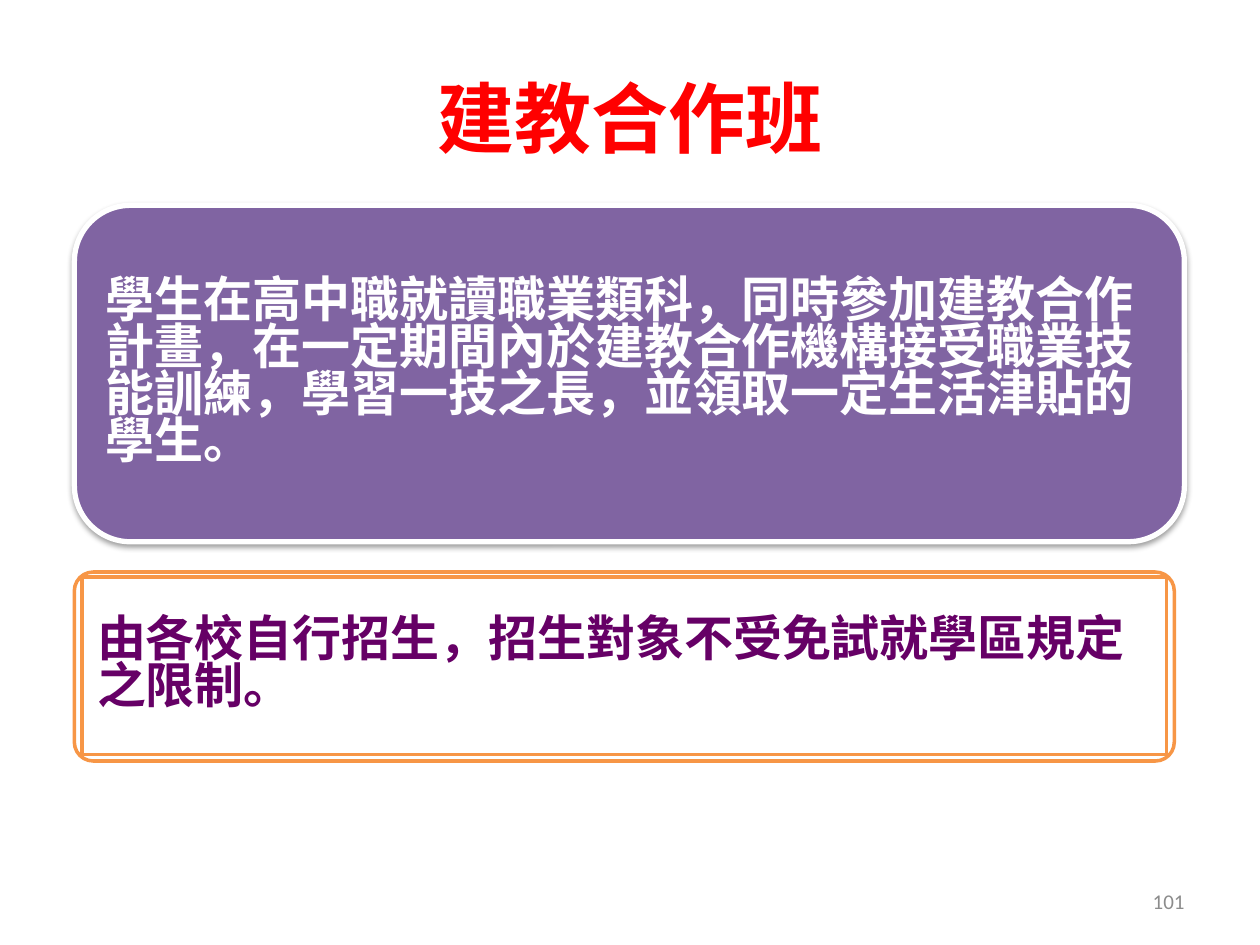
import pptx
import pptx.util
import pptx.dml.color
import pptx.enum.shapes
import pptx.enum.text
import pptx.oxml.ns
from lxml import etree

Inches, Pt = pptx.util.Inches, pptx.util.Pt
RGBColor = pptx.dml.color.RGBColor
SHAPES = pptx.enum.shapes.MSO_SHAPE
ALIGN = pptx.enum.text.PP_ALIGN
qn = pptx.oxml.ns.qn

COLORS = {"white": "FFFFFF", "purple": "8064A2", "orange": "F79646",
          "red": "FF0000", "plum": "660066", "gray": "8C8C8C", "black": "000000"}
CJK_FONT = "Noto Sans CJK SC"


def add_box(kind, bounds, fill, line, line_width):
    shape = slide.shapes.add_shape(kind, *map(Inches, bounds))
    shape.shadow.inherit = False
    shape.fill.solid()
    shape.fill.fore_color.rgb = RGBColor.from_string(COLORS[fill])
    shape.line.color.rgb = RGBColor.from_string(COLORS[line])
    shape.line.width = Pt(line_width)
    return shape


def write_text(shape, text, color, font_format, paragraph_format, insets=(0.1, 0.05)):
    """Fill the shape with one paragraph; insets are horizontal, vertical."""
    horizontal, vertical = map(Inches, insets)
    frame_format = {"word_wrap": True,
                    "vertical_anchor": pptx.enum.text.MSO_ANCHOR.MIDDLE,
                    "margin_left": horizontal, "margin_right": horizontal,
                    "margin_top": vertical, "margin_bottom": vertical}
    frame = shape.text_frame
    paragraph = frame.paragraphs[0]
    run = paragraph.add_run()
    run.text = text
    run.font.color.rgb = RGBColor.from_string(COLORS[color])
    for target, values in ((frame, frame_format), (paragraph, paragraph_format),
                           (run.font, font_format)):
        for name, value in values.items():
            setattr(target, name, value)
    east_asian = etree.SubElement(run.font._element, qn("a:ea"))
    east_asian.set("typeface", CJK_FONT)


presentation = pptx.Presentation()
presentation.slide_width = Inches(10)
presentation.slide_height = Inches(7.5)
slide = presentation.slides.add_slide(presentation.slide_layouts[6])

body_font = {"name": CJK_FONT, "size": Pt(28), "bold": True}
body_paragraph = {"alignment": ALIGN.LEFT, "line_spacing": 0.8}

# Title
title = slide.shapes.add_textbox(*map(Inches, (0.5, 0.3, 9, 1.25)))
write_text(title, "建教合作班", "red",
           {"name": "Calibri", "size": Pt(44), "bold": True},
           {"alignment": ALIGN.CENTER})

# Definition panel with a soft shadow
definition_panel = add_box(SHAPES.ROUNDED_RECTANGLE, (0.59, 1.63, 8.81, 2.67),
                           "purple", "white", 3)
effects = definition_panel._element.spPr.find(qn("a:effectLst"))
shadow = etree.SubElement(effects, qn("a:outerShdw"), blurRad=str(Pt(3.1)),
                          dist=str(Pt(1.6)), dir="5400000", rotWithShape="0")
shadow_color = etree.SubElement(shadow, qn("a:srgbClr"), val=COLORS["black"])
etree.SubElement(shadow_color, qn("a:alpha"), val="38000")

definition = slide.shapes.add_textbox(*map(Inches, (0.72, 1.76, 8.55, 2.41)))
write_text(definition,
           "學生在高中職就讀職業類科，同時參加建教合作計畫，在一定期間內於建教合作機構"
           "接受職業技能訓練，學習一技之長，並領取一定生活津貼的學生。",
           "white", body_font, body_paragraph, (0.12, 0.06))

# Slide number
slide_number = slide.shapes.add_textbox(*map(Inches, (7.17, 6.95, 2.33, 0.4)))
write_text(slide_number, "101", "gray", {"name": "Calibri", "size": Pt(12)},
           {"alignment": ALIGN.RIGHT})

# Admission rule in a double frame
outer_frame = add_box(SHAPES.ROUNDED_RECTANGLE, (0.59, 4.54, 8.73, 1.5),
                      "white", "orange", 2)
outer_frame.adjustments[0] = 0.1
admission_rule = add_box(SHAPES.RECTANGLE, (0.65, 4.58, 8.61, 1.41),
                         "white", "orange", 2)
write_text(admission_rule, "由各校自行招生，招生對象不受免試就學區規定之限制。",
           "plum", body_font, body_paragraph, (0.12, 0.12))

presentation.save("out.pptx")
